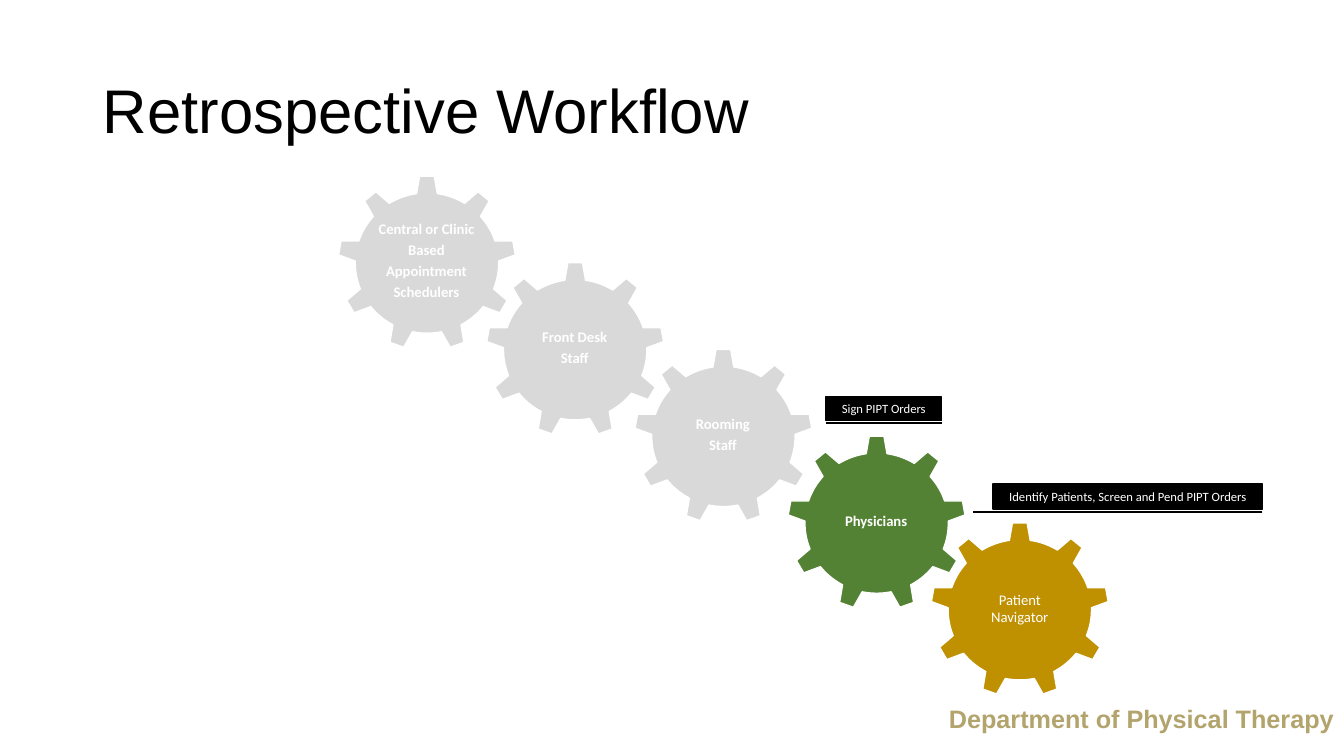
from lxml.etree import SubElement
from pptx import Presentation
from pptx.dml.color import RGBColor
from pptx.enum.shapes import MSO_CONNECTOR, MSO_SHAPE
from pptx.enum.text import MSO_ANCHOR, PP_ALIGN
from pptx.oxml.ns import qn
from pptx.util import Inches, Pt

BLACK = RGBColor(0x00, 0x00, 0x00)
WHITE = RGBColor(0xFF, 0xFF, 0xFF)
GRAY = RGBColor(0xD9, 0xD9, 0xD9)
GREEN = RGBColor(0x54, 0x82, 0x35)
GOLD = RGBColor(0xBF, 0x90, 0x00)
TAN = RGBColor(0xB2, 0xA4, 0x6C)

# Content
TITLE = "Retrospective Workflow"
DEPARTMENT = "Department of Physical Therapy"
# Left edge, fill, label lines
STAFF_GEARS = [
    (3.35, GRAY, ["Central or Clinic", "Based", "Appointment", "Schedulers"]),
    (4.82, GRAY, ["Front Desk", "Staff"]),
    (6.29, GRAY, ["Rooming", "Staff"]),
    (7.81, GREEN, ["Physicians"]),
]
NAVIGATOR = (9.23, GOLD, "Patient Navigator")
# Text, left, top, width, height, left end and height of the rule below
CALLOUTS = [
    ("Sign PIPT Orders", 8.19, 3.94, 1.15, 0.23, 8.19, 4.2),
    ("Identify Patients, Screen and Pend PIPT Orders",
     9.85, 4.8, 2.67, 0.25, 9.65, 5.08),
]
GEAR_TOP, GEAR_STEP = 1.74, 0.86
GEAR_WIDTH, GEAR_HEIGHT = 1.77, 1.74

deck = Presentation()
deck.slide_width, deck.slide_height = Inches(13.33), Inches(7.5)
page = deck.slides.add_slide(deck.slide_layouts[5])


def write(box, lines, size, color=WHITE, font="Calibri", bold=False,
          align=PP_ALIGN.CENTER, anchor=MSO_ANCHOR.MIDDLE,
          spacing=1.0, after=0, inset=None):
    frame = box.text_frame
    frame.word_wrap = True
    frame.vertical_anchor = anchor
    if inset is not None:
        frame.margin_left = frame.margin_right = Inches(inset)
        frame.margin_top = frame.margin_bottom = Inches(inset)
    for index, line in enumerate(lines):
        para = frame.add_paragraph() if index else frame.paragraphs[0]
        para.alignment = align
        para.line_spacing = spacing
        para.space_before, para.space_after = Pt(0), Pt(after)
        span = para.add_run()
        span.text = line
        span.font.name, span.font.size = font, Pt(size)
        span.font.bold, span.font.color.rgb = bold, color


def add_block(kind, left, top, width, height, fill, line):
    block = page.shapes.add_shape(
        kind, Inches(left), Inches(top), Inches(width), Inches(height))
    block.shadow.inherit = False
    block.fill.solid()
    block.fill.fore_color.rgb = fill
    block.line.color.rgb = line
    block.line.width = Pt(1)
    return block


def add_gear(step, left, fill):
    return add_block(MSO_SHAPE.GEAR_9, left, GEAR_TOP + step * GEAR_STEP,
                     GEAR_WIDTH, GEAR_HEIGHT, fill, WHITE)


# Title
title = page.shapes.title
title.left, title.top = Inches(0.92), Inches(0.4)
title.width, title.height = Inches(11.5), Inches(1.45)
write(title, [TITLE], 44, color=BLACK, font="Arial",
      align=PP_ALIGN.LEFT, spacing=0.9)

# Department line
footer = page.shapes.add_textbox(
    Inches(6.57), Inches(6.93), Inches(6.76), Inches(0.4))
write(footer, [DEPARTMENT], 18, color=TAN, font="Arial", bold=True,
      align=PP_ALIGN.RIGHT, anchor=MSO_ANCHOR.TOP)

# Staff gears with their labels
for step, (left, fill, lines) in enumerate(STAFF_GEARS):
    gear = add_gear(step, left, fill)
    label = page.shapes.add_textbox(
        gear.left + Inches(0.35), gear.top + Inches(0.41),
        Inches(1.06), Inches(0.89))
    write(label, lines, 10.5, bold=True, spacing=0.9, after=3.7, inset=0.01)

# Callouts, each with a rule below
for text, left, top, width, height, rule_left, rule_top in CALLOUTS:
    rule = page.shapes.add_connector(
        MSO_CONNECTOR.STRAIGHT, Inches(left + width), Inches(rule_top),
        Inches(rule_left), Inches(rule_top))
    rule.line.color.rgb = BLACK
    rule.line.width = Pt(1.25)
    SubElement(rule._element.spPr, qn("a:effectLst"))
    callout = add_block(MSO_SHAPE.RECTANGLE, left, top, width, height,
                        BLACK, BLACK)
    write(callout, [text], 9)

# Patient navigator gear
left, fill, text = NAVIGATOR
write(add_gear(len(STAFF_GEARS), left, fill), [text], 10.5)

deck.save("out.pptx")
